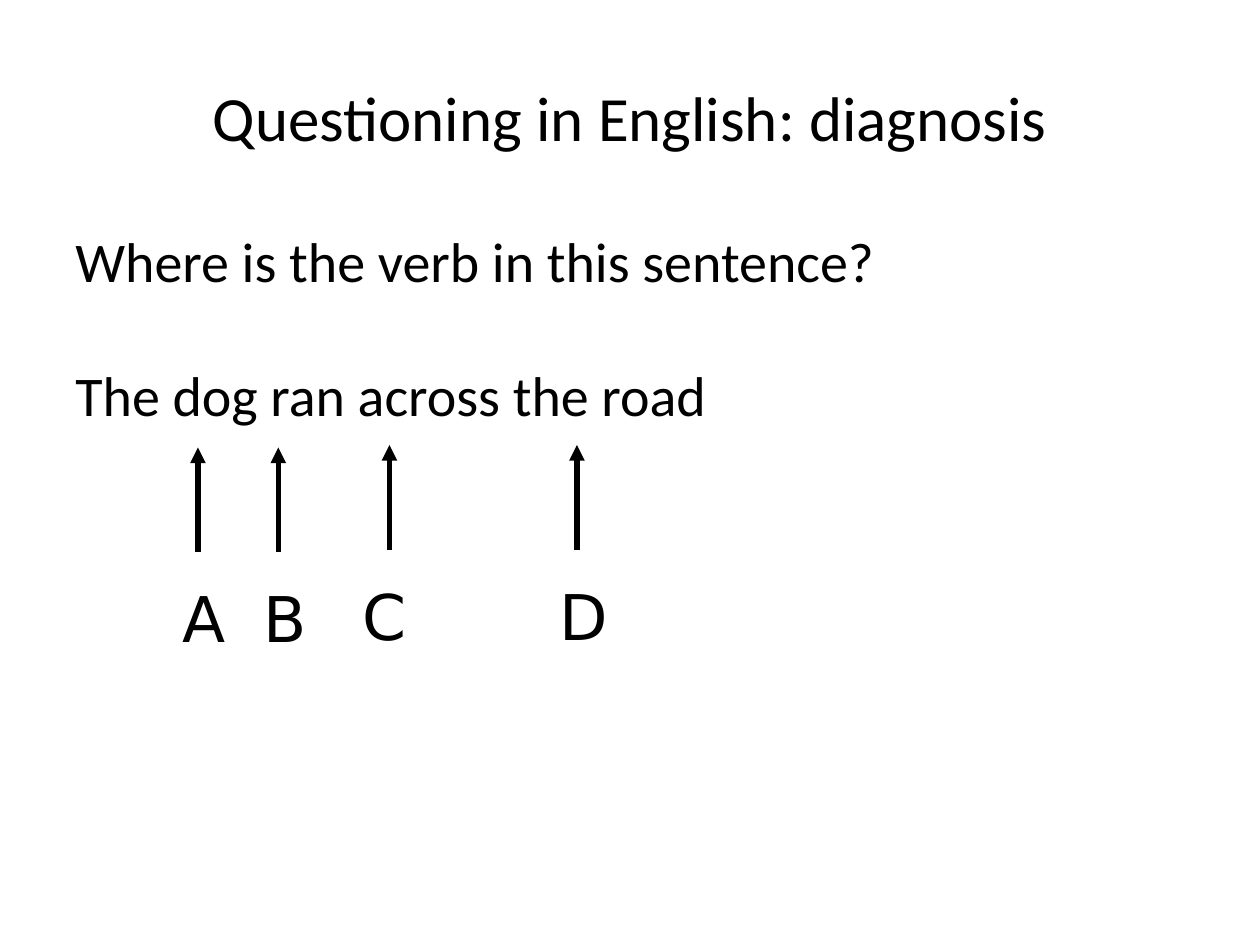
from dataclasses import dataclass

from lxml import etree
from pptx import Presentation
from pptx.dml.color import RGBColor
from pptx.enum.shapes import MSO_CONNECTOR
from pptx.enum.text import MSO_ANCHOR, PP_ALIGN
from pptx.oxml.ns import qn
from pptx.util import Cm, Pt

STRAIGHT = MSO_CONNECTOR.STRAIGHT
TOP, MIDDLE = MSO_ANCHOR.TOP, MSO_ANCHOR.MIDDLE
LEFT, CENTER = PP_ALIGN.LEFT, PP_ALIGN.CENTER


@dataclass(frozen=True)
class Theme:
    """Colours, fonts and type sizes."""
    ink: RGBColor = RGBColor(0, 0, 0)
    paper: RGBColor = RGBColor(255, 255, 255)
    face: str = "Calibri"
    mark: str = "DejaVu Sans"
    head: Pt = Pt(36)
    body: Pt = Pt(32)
    line: Pt = Pt(3)


THEME = Theme()
TITLE = "Questioning in English: diagnosis"
BODY = ["Where is the verb in this sentence?", "The dog ran across the road"]
# letter, arrow x, arrow tip y, label left
MARKS = [
    ("A", 3.99, 9.02, 2.95),
    ("B", 5.61, 9.02, 4.57),
    ("C", 7.85, 8.97, 6.58),
    ("D", 11.63, 8.97, 10.59),
]


def style(item, values):
    """Set each attribute in values on item."""
    for name, value in values.items():
        setattr(item, name, value)


def write(shape, lines, size, face, align, anchor=TOP, gap=Pt(0)):
    """Fill a shape with paragraphs, with a gap between them."""
    frame = shape.text_frame
    style(frame, {"word_wrap": True, "vertical_anchor": anchor})
    frame.text = "\n".join(lines)
    for index, para in enumerate(frame.paragraphs):
        before = gap if index else Pt(0)
        style(para, {"alignment": align, "space_before": before})
        font = para.runs[0].font
        style(font, {"size": size, "name": face})
        font.color.rgb = THEME.ink


def add_title(slide):
    """Place and format the title."""
    title = slide.shapes.title
    style(title, {"left": Cm(1.27), "top": Cm(0.76),
                  "width": Cm(22.86), "height": Cm(3.18)})
    write(title, [TITLE], THEME.head, THEME.face, CENTER, MIDDLE)


def add_body(slide):
    """Add the question and its sentence."""
    box = slide.shapes.add_textbox(Cm(1.27), Cm(4.45), Cm(22.86), Cm(12.57))
    write(box, BODY, THEME.body, THEME.face, LEFT, gap=Pt(38))


def add_arrow(shapes, x, tip):
    """Add an upward arrow that ends at tip."""
    arrow = shapes.add_connector(STRAIGHT, Cm(x), Cm(tip + 2.11), Cm(x), Cm(tip))
    arrow.line.color.rgb = THEME.ink
    arrow.line.width = THEME.line
    ln = arrow.line._get_or_add_ln()
    etree.SubElement(ln, qn("a:tailEnd"), type="triangle")
    etree.SubElement(arrow._element.spPr, qn("a:effectLst"))


def add_mark(slide, letter, x, tip, left):
    """Group an arrow with the letter below it."""
    shapes = slide.shapes.add_group_shape().shapes
    add_arrow(shapes, x, tip)
    label = shapes.add_textbox(Cm(left), Cm(tip + 2.54), Cm(2.34), Cm(1.78))
    write(label, [letter], THEME.head, THEME.mark, CENTER)


def main():
    """Build and save the slide."""
    deck = Presentation()
    style(deck, {"slide_width": Cm(25.4), "slide_height": Cm(19.05)})
    slide = deck.slides.add_slide(deck.slide_layouts.get_by_name("Title Only"))
    fill = slide.background.fill
    fill.solid()
    fill.fore_color.rgb = THEME.paper
    add_title(slide)
    add_body(slide)
    for mark in MARKS:
        add_mark(slide, *mark)
    deck.save("out.pptx")


if __name__ == "__main__":
    main()
